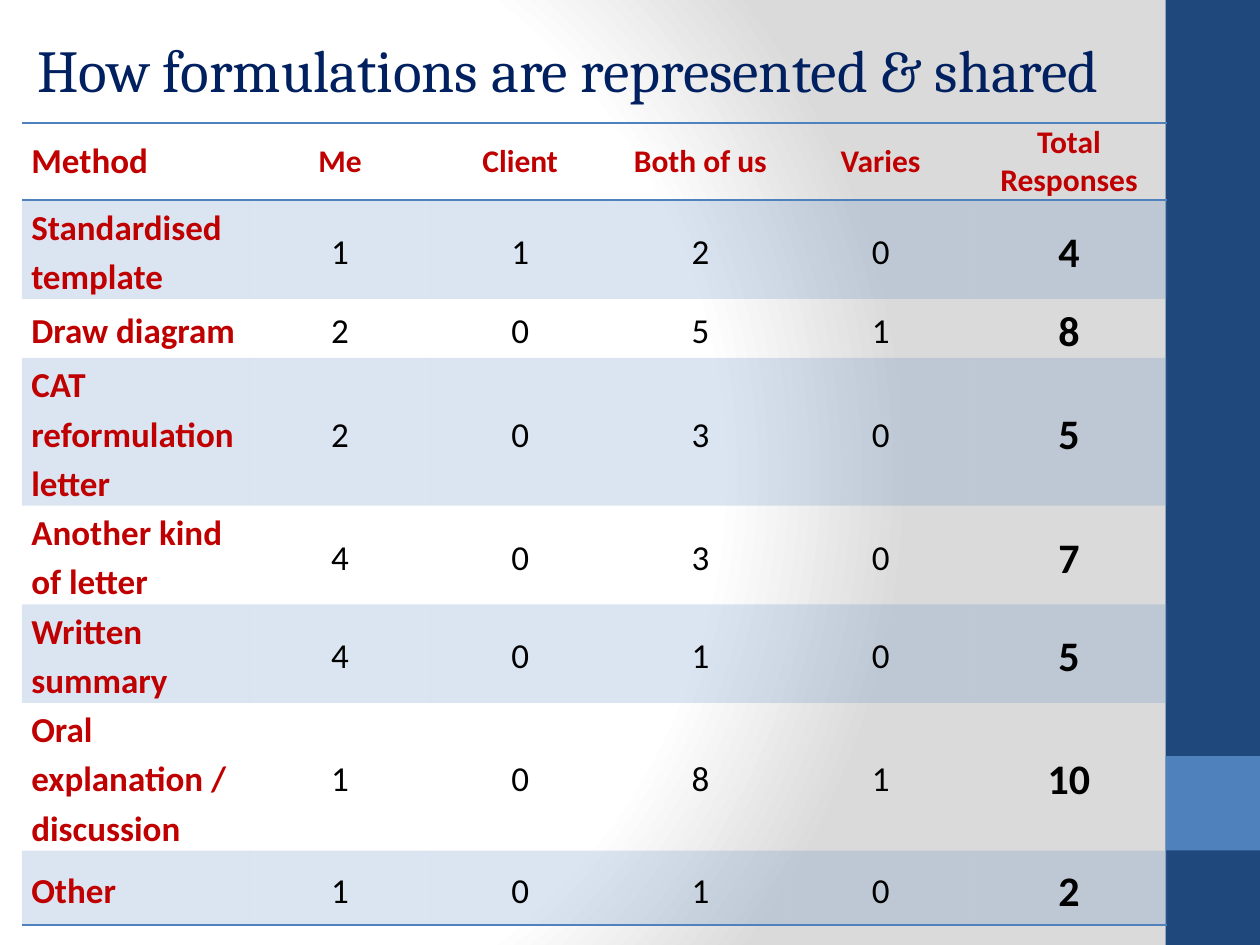
from dataclasses import dataclass

from lxml import etree
from pptx import Presentation
from pptx.dml.color import RGBColor
from pptx.enum.shapes import MSO_SHAPE
from pptx.enum.text import MSO_ANCHOR, PP_ALIGN
from pptx.oxml import parse_xml
from pptx.oxml.ns import qn
from pptx.util import Pt

RECTANGLE = MSO_SHAPE.RECTANGLE
MIDDLE = MSO_ANCHOR.MIDDLE
LEFT, CENTER = PP_ALIGN.LEFT, PP_ALIGN.CENTER
NS = "http://schemas.openxmlformats.org/drawingml/2006/main"
PLAIN_TABLE_STYLE = "{2D5ABB26-0587-4C30-8999-92F81FD0307C}"


@dataclass(frozen=True)
class Theme:
    body_font: str = "Calibri"
    title_font: str = "Cambria"
    title: str = "002060"
    label: str = "C00000"
    number: str = "000000"
    accent: str = "4F81BD"
    sidebar: str = "1F497D"
    backdrop: tuple = ((0, "FFFFFF"), (75, "FFFFFF"), (100, "DADADA"))
    title_size: int = 34
    total_size: int = 24
    body_size: int = 20
    header_size: int = 18


THEME = Theme()

HEADERS = ["Method", "Me", "Client", "Both of us", "Varies", "Total Responses"]
METHODS = [
    ("Standardised template", 1, 1, 2, 0, 4),
    ("Draw diagram", 2, 0, 5, 1, 8),
    ("CAT reformulation letter", 2, 0, 3, 0, 5),
    ("Another kind of letter ", 4, 0, 3, 0, 7),
    ("Written summary", 4, 0, 1, 0, 5),
    ("Oral explanation / discussion", 1, 0, 8, 1, 10),
    ("Other", 1, 0, 1, 0, 2),
]
COLUMN_WIDTHS = [130.3, 103, 103, 103, 103, 112.3]
ROW_HEIGHTS = [44, 56.2, 33.8, 84.4, 56.2, 56.2, 84.4, 42.6]


def style_run(run, size, color, font, bold=False):
    run.font.name = font
    run.font.size = Pt(size)
    run.font.bold = bold
    run.font.color.rgb = RGBColor.from_string(color)


def paint_background(slide):
    stops = "".join(
        f'<a:gs pos="{percent * 1000}"><a:srgbClr val="{color}"/></a:gs>'
        for percent, color in THEME.backdrop)
    gradient = parse_xml(
        f'<a:gradFill xmlns:a="{NS}" rotWithShape="1"><a:gsLst>{stops}</a:gsLst>'
        '<a:path path="circle"><a:fillToRect l="20000" t="50000" r="100000" b="50000"/>'
        '</a:path></a:gradFill>')
    slide.background.fill.solid()
    solid = slide.element.find(".//" + qn("p:bgPr")).find(qn("a:solidFill"))
    solid.getparent().replace(solid, gradient)


def add_sidebar(slide, left, top, width, height):
    accent_top = top + height * 0.8
    blocks = [(top, height, THEME.sidebar), (accent_top, width, THEME.accent)]
    for block_top, block_height, color in blocks:
        block = slide.shapes.add_shape(
            RECTANGLE, Pt(left), Pt(block_top), Pt(width), Pt(block_height))
        block.shadow.inherit = False
        block.fill.solid()
        block.fill.fore_color.rgb = RGBColor.from_string(color)
        block.line.fill.background()


def add_title(slide, left, top, width, height):
    title = slide.shapes.add_textbox(Pt(left), Pt(top), Pt(width), Pt(height))
    title.text_frame.word_wrap = True
    title.text_frame.text = "How formulations are represented & shared"
    style_run(title.text_frame.paragraphs[0].runs[0],
              THEME.title_size, THEME.title, THEME.title_font)


def draw_border(cell, side):
    properties = cell._tc.get_or_add_tcPr()
    properties.append(parse_xml(
        f'<a:{side} xmlns:a="{NS}" w="{Pt(1)}"><a:solidFill>'
        f'<a:srgbClr val="{THEME.accent}"/></a:solidFill></a:{side}>'))


def fill_cell(cell, banded):
    if not banded:
        cell.fill.background()
        return
    cell.fill.solid()
    cell.fill.fore_color.rgb = RGBColor.from_string(THEME.accent)
    color = cell._tc.tcPr.find(qn("a:solidFill")).find(qn("a:srgbClr"))
    etree.SubElement(color, qn("a:alpha"), val="20000")


def write_cell(cell, text, row, column):
    is_header, is_label = row == 0, column == 0
    is_total = column == len(HEADERS) - 1
    cell.vertical_anchor = MIDDLE
    cell.margin_left = cell.margin_right = Pt(5.4)
    cell.margin_top = cell.margin_bottom = 0
    cell.text_frame.text = str(text)
    paragraph = cell.text_frame.paragraphs[0]
    paragraph.alignment = LEFT if is_label else CENTER
    if not is_header:
        paragraph.line_spacing = 1.15

    size = THEME.body_size
    if is_header and not is_label:
        size = THEME.header_size
    elif is_total:
        size = THEME.total_size
    color = THEME.label if is_header or is_label else THEME.number
    style_run(paragraph.runs[0], size, color, THEME.body_font,
              bold=is_header or is_label or is_total)


def add_responses_table(slide, left, top, width, height):
    rows = [HEADERS, *METHODS]
    table = slide.shapes.add_table(
        len(rows), len(HEADERS), Pt(left), Pt(top), Pt(width), Pt(height)).table
    table.first_row = table.horz_banding = False
    table._tbl.tblPr.find(qn("a:tableStyleId")).text = PLAIN_TABLE_STYLE
    for column, column_width in zip(table.columns, COLUMN_WIDTHS):
        column.width = Pt(column_width)
    for row, row_height in zip(table.rows, ROW_HEIGHTS):
        row.height = Pt(row_height)

    for r, values in enumerate(rows):
        for c, value in enumerate(values):
            cell = table.cell(r, c)
            write_cell(cell, value, r, c)
            # Rules above and below the header, and under the last row
            if r == 0:
                draw_border(cell, "lnT")
            if r in (0, len(rows) - 1):
                draw_border(cell, "lnB")
            fill_cell(cell, banded=r % 2 == 1)


def main():
    presentation = Presentation()
    presentation.slide_width, presentation.slide_height = Pt(720), Pt(540)
    slide = presentation.slides.add_slide(presentation.slide_layouts[6])

    paint_background(slide)
    add_sidebar(slide, 666, 0, 54, 540)
    add_responses_table(slide, 12.5, 70.4, sum(COLUMN_WIDTHS), sum(ROW_HEIGHTS))
    add_title(slide, 14.4, 15.2, 692, 48.2)

    presentation.save("out.pptx")


if __name__ == "__main__":
    main()
